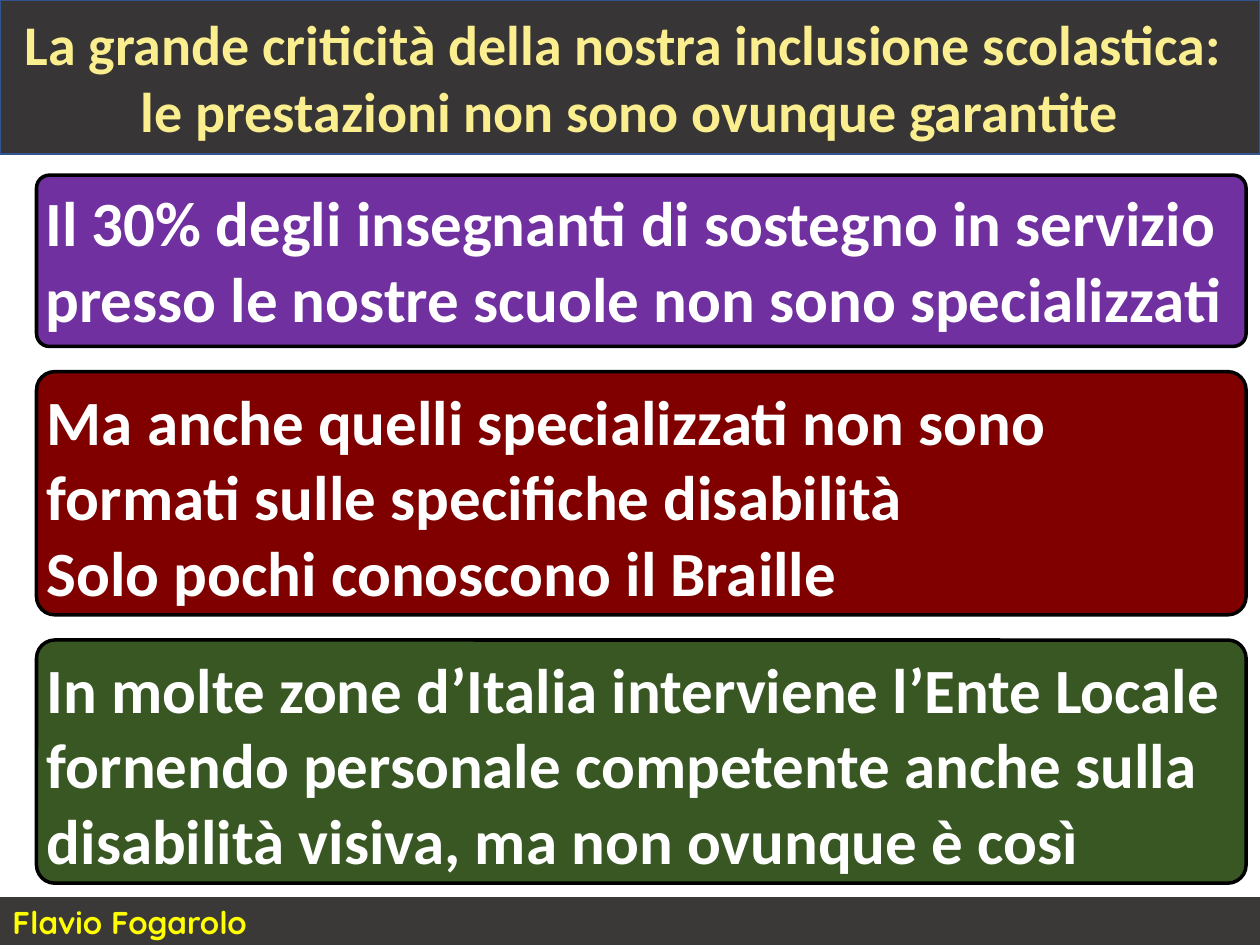
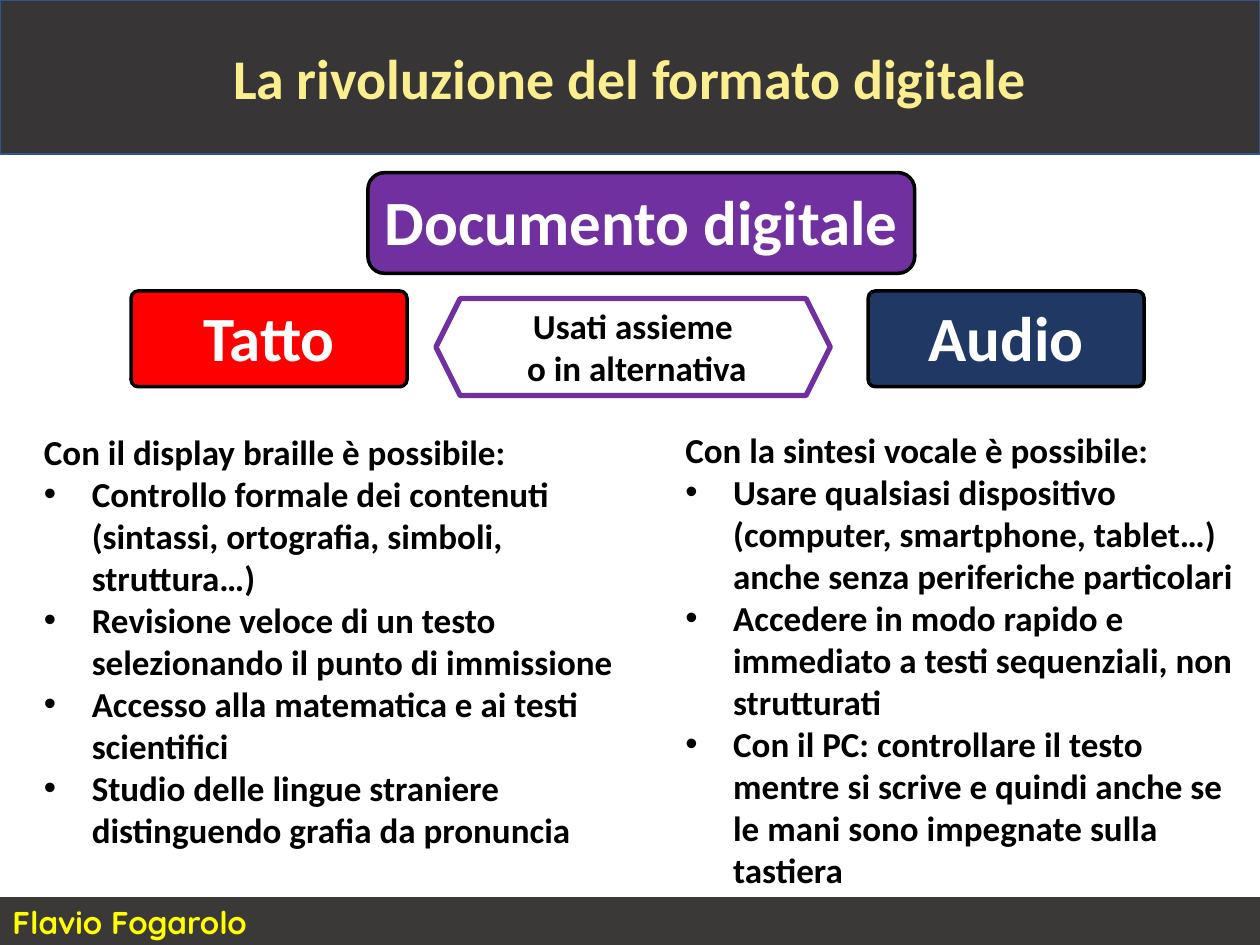
from lxml import etree
from pptx import Presentation, util as u
from pptx.dml.color import RGBColor
from pptx.enum import shapes, text
from pptx.oxml.ns import qn

COLORS = {
    "band": "373535", "edge": "325491", "title": "FAEE8F",
    "foot": "3B3838", "author": "FFFF00",
    "violet": "7030A0", "maroon": "800000", "green": "385723",
    "red": "FF0000", "navy": "203864",
    "white": "FFFFFF", "black": "000000",
}
KIND = shapes.MSO_SHAPE
LEFT, MID = text.PP_ALIGN.LEFT, text.PP_ALIGN.CENTER
INDENT = 0.38


def color(name):
    return RGBColor.from_string(COLORS[name])


def write(shape, lines, size, tone, align=LEFT, face="Calibri",
          anchor=text.MSO_ANCHOR.TOP, inset=None, after=0, bullets=False):
    """Fill a shape with bold paragraphs; the first one is never bulleted."""
    frame = shape.text_frame
    frame.word_wrap = True
    frame.vertical_anchor = anchor
    if inset is not None:
        frame.margin_left = frame.margin_right = u.Inches(inset)
        frame.margin_top = frame.margin_bottom = u.Inches(inset)
    for i, line in enumerate(lines):
        par = frame.add_paragraph() if i else frame.paragraphs[0]
        par.text = line
        par.alignment = align
        par.space_after = u.Pt(after)
        if bullets and i:
            add_bullet(par)
        font = par.font
        font.name, font.size, font.bold = face, u.Pt(size), True
        font.color.rgb = color(tone)


def add_bullet(par):
    props = par._p.get_or_add_pPr()
    props.set("marL", str(u.Inches(INDENT)))
    props.set("indent", str(-u.Inches(INDENT)))
    etree.SubElement(props, qn("a:buFont")).set("typeface", "Arial")
    etree.SubElement(props, qn("a:buChar")).set("char", "•")


def add_shape(slide, kind, at, fill=None, line=None, width=1):
    shape = slide.shapes.add_shape(kind, *map(u.Inches, at))
    shape.shadow.inherit = False
    if fill:
        shape.fill.solid()
        shape.fill.fore_color.rgb = color(fill)
    else:
        shape.fill.background()
    if line:
        shape.line.color.rgb = color(line)
        shape.line.width = u.Pt(width)
    else:
        shape.line.fill.background()
    return shape


def add_card(slide, at, fill, words, align=LEFT, curve=0.075):
    card = add_shape(slide, KIND.ROUNDED_RECTANGLE, at, fill, "black", 2)
    card.adjustments[0] = curve
    write(card, [words], 36, "white", align, inset=0.04, after=8)


def add_text(slide, at, lines, align=LEFT, bullets=False):
    box = slide.shapes.add_textbox(*map(u.Inches, at))
    write(box, lines, 20, "black", align, bullets=bullets)


def add_slide(deck, title):
    """Blank slide with the shared footer and title band."""
    slide = deck.slides.add_slide(deck.slide_layouts[6])
    foot = add_shape(slide, KIND.RECTANGLE, (0, 7.12, 10, 0.38), "foot")
    write(foot, ["Flavio Fogarolo"], 18, "author", face="Quicksand")
    band = add_shape(slide, KIND.RECTANGLE, (0, 0, 10, 1.22), "band", "edge")
    write(band, [title], 32, "title", MID, anchor=text.MSO_ANCHOR.MIDDLE)
    return slide


def build_issues(deck):
    slide = add_slide(
        deck, "La grande criticità della nostra inclusione scolastica: \v"
              "le prestazioni non sono ovunque garantite")
    # Stacked cards with equal gaps
    cards = [
        (1.36, "violet", "Il 30% degli insegnanti di sostegno in servizio "
                         "presso le nostre scuole non sono specializzati"),
        (1.93, "maroon", "Ma anche quelli specializzati non sono formati "
                         "sulle specifiche disabilità\v"
                         "Solo pochi conoscono il Braille"),
        (1.93, "green", "In molte zone d’Italia interviene l’Ente Locale "
                        "fornendo personale competente anche sulla "
                        "disabilità visiva, ma non ovunque è così"),
    ]
    top, gap = 1.39, 0.2
    for height, fill, words in cards:
        add_card(slide, (0.29, top, 9.6, height), fill, words)
        top += height + gap


def build_digital(deck):
    slide = add_slide(deck, "La rivoluzione del formato digitale")
    # Document and its two channels
    add_card(slide, (2.92, 1.37, 4.34, 0.8), "violet",
             "Documento digitale", MID, 0.167)
    for left, fill, words in ((1.04, "red", "Tatto"), (6.89, "navy", "Audio")):
        add_card(slide, (left, 2.31, 2.19, 0.76), fill, words, MID)
    # Link between the channels
    add_shape(slide, KIND.HEXAGON, (3.46, 2.37, 3.13, 0.77),
              line="violet", width=3)
    add_text(slide, (3.34, 2.37, 3.43, 0.77),
             ["Usati assieme \vo in alternativa"], MID)
    # What each channel allows
    add_text(slide, (0.25, 3.37, 4.75, 3.47), [
        "Con il display braille è possibile:",
        "Controllo formale dei contenuti (sintassi, ortografia, simboli, "
        "struttura…)",
        "Revisione veloce di un testo selezionando il punto di immissione",
        "Accesso alla matematica e ai testi scientifici",
        "Studio delle lingue straniere distinguendo grafia da pronuncia",
    ], bullets=True)
    add_text(slide, (5.34, 3.35, 4.59, 3.77), [
        "Con la sintesi vocale è possibile:",
        "Usare qualsiasi dispositivo (computer, smartphone, tablet…) anche "
        "senza periferiche particolari",
        "Accedere in modo rapido e immediato a testi sequenziali, non "
        "strutturati",
        "Con il PC: controllare il testo mentre si scrive e quindi anche se "
        "le mani sono impegnate sulla tastiera",
    ], bullets=True)


def main():
    deck = Presentation()
    deck.slide_width, deck.slide_height = u.Inches(10), u.Inches(7.5)
    build_issues(deck)
    build_digital(deck)
    deck.save("out.pptx")


if __name__ == "__main__":
    main()
